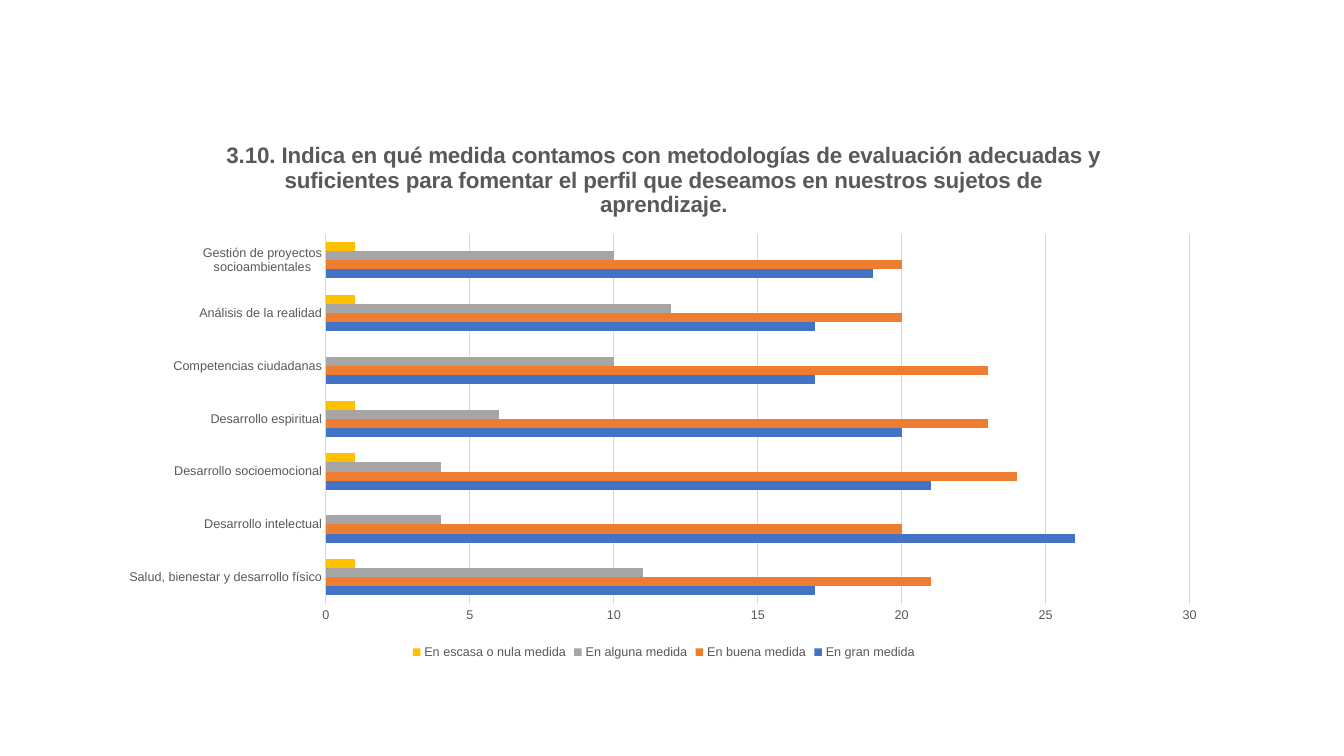
from dataclasses import dataclass

from lxml import etree
from pptx import Presentation, util as u
from pptx.chart.data import CategoryChartData
from pptx.dml.color import RGBColor
from pptx.enum import chart as charts
from pptx.oxml import ns

FONT = "Arial"
TEXT_COLOUR = "595959"
GRID_COLOUR = "D9D9D9"
TITLE = (
    "3.10. Indica en qué medida contamos con metodologías de evaluación adecuadas y "
    "suficientes para fomentar el perfil que deseamos en nuestros sujetos de aprendizaje."
)
CATEGORIES = [
    "Salud, bienestar y desarrollo físico",
    "Desarrollo intelectual",
    "Desarrollo socioemocional",
    "Desarrollo espiritual",
    "Competencias ciudadanas",
    "Análisis de la realidad",
    "Gestión de proyectos socioambientales",
]


@dataclass
class Answer:
    name: str
    values: list[int]
    colour: str


ANSWERS = [
    Answer("En gran medida", [17, 26, 21, 20, 17, 17, 19], "4472C4"),
    Answer("En buena medida", [21, 20, 24, 23, 23, 20, 20], "ED7D31"),
    Answer("En alguna medida", [11, 4, 4, 6, 10, 12, 10], "A5A5A5"),
    Answer("En escasa o nula medida", [1, 0, 1, 1, 0, 1, 1], "FFC000"),
]


def colour(code: str) -> RGBColor:
    return RGBColor.from_string(code)


def format_font(font, size: float, bold: bool = False) -> None:
    font.name = FONT
    font.size = u.Pt(size)
    font.bold = bold
    font.color.rgb = colour(TEXT_COLOUR)


def format_line(line) -> None:
    line.color.rgb = colour(GRID_COLOUR)
    line.width = u.Pt(0.75)


def place_plot(chart, x: float, y: float, w: float, h: float) -> None:
    """Set the inner plot area as fractions of the chart."""
    plot_area = chart.plots[0]._element.getparent()
    for old in plot_area.findall(ns.qn("c:layout")):
        plot_area.remove(old)
    layout = etree.Element(ns.qn("c:layout"))
    manual = etree.SubElement(layout, ns.qn("c:manualLayout"))
    settings = {"layoutTarget": "inner", "xMode": "edge", "yMode": "edge",
                "x": x, "y": y, "w": w, "h": h}
    for tag, value in settings.items():
        etree.SubElement(manual, ns.qn(f"c:{tag}")).set("val", str(value))
    plot_area.insert(0, layout)


def add_answer_chart(slide) -> None:
    chart_data = CategoryChartData()
    chart_data.categories = CATEGORIES
    for answer in ANSWERS:
        chart_data.add_series(answer.name, answer.values)
    chart = slide.shapes.add_chart(
        charts.XL_CHART_TYPE.BAR_CLUSTERED,
        u.Cm(2.72), u.Cm(3.05), u.Cm(28.02), u.Cm(13.67), chart_data,
    ).chart
    format_font(chart.font, 9)

    # Title
    chart.has_title = True
    run = chart.chart_title.text_frame.paragraphs[0].add_run()
    run.text = TITLE
    format_font(run.font, 16, bold=True)
    chart.chart_title.include_in_layout = False

    # Bars
    plot = chart.plots[0]
    plot.gap_width = 182
    plot.overlap = 0
    plot.vary_by_categories = False
    for series, answer in zip(plot.series, ANSWERS):
        series.format.fill.solid()
        series.format.fill.fore_color.rgb = colour(answer.colour)
        series.invert_if_negative = False

    # Axes
    for axis in (chart.category_axis, chart.value_axis):
        axis.major_tick_mark = charts.XL_TICK_MARK.NONE
        axis.minor_tick_mark = charts.XL_TICK_MARK.NONE
        format_font(axis.tick_labels.font, 9)
    format_line(chart.category_axis.format.line)
    value_axis = chart.value_axis
    value_axis.minimum_scale, value_axis.maximum_scale = 0, 30
    value_axis.major_unit = 5
    value_axis.format.line.fill.background()
    value_axis.has_major_gridlines = True
    format_line(value_axis.major_gridlines.format.line)

    # Legend
    chart.has_legend = True
    chart.legend.position = charts.XL_LEGEND_POSITION.BOTTOM
    chart.legend.include_in_layout = False
    format_font(chart.legend.font, 9)
    place_plot(chart, 0.196, 0.208, 0.777, 0.682)


def main() -> None:
    presentation = Presentation()
    presentation.slide_width = u.Cm(33.87)
    presentation.slide_height = u.Cm(19.05)
    slide = presentation.slides.add_slide(presentation.slide_layouts[6])
    add_answer_chart(slide)
    presentation.save("out.pptx")


if __name__ == "__main__":
    main()
